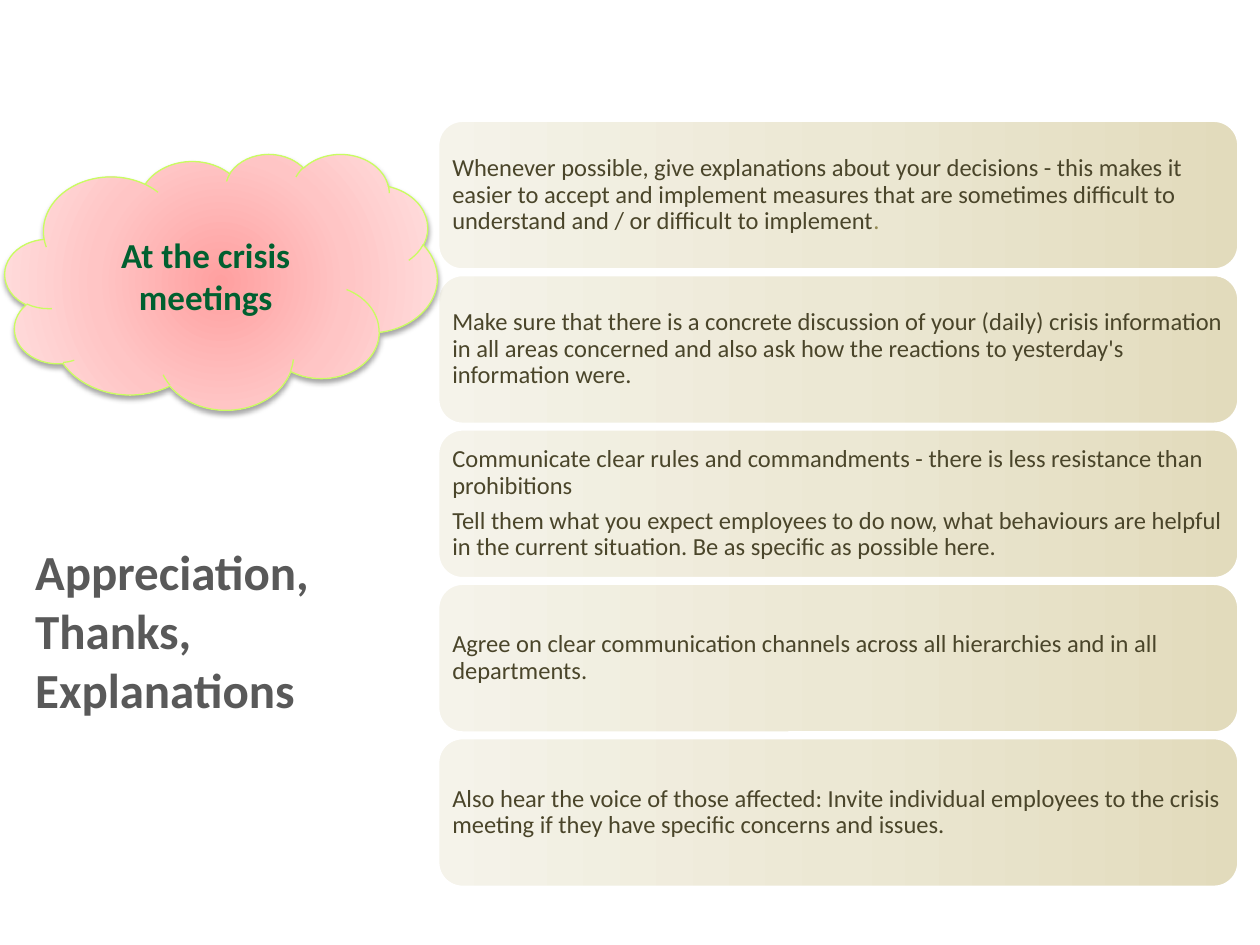
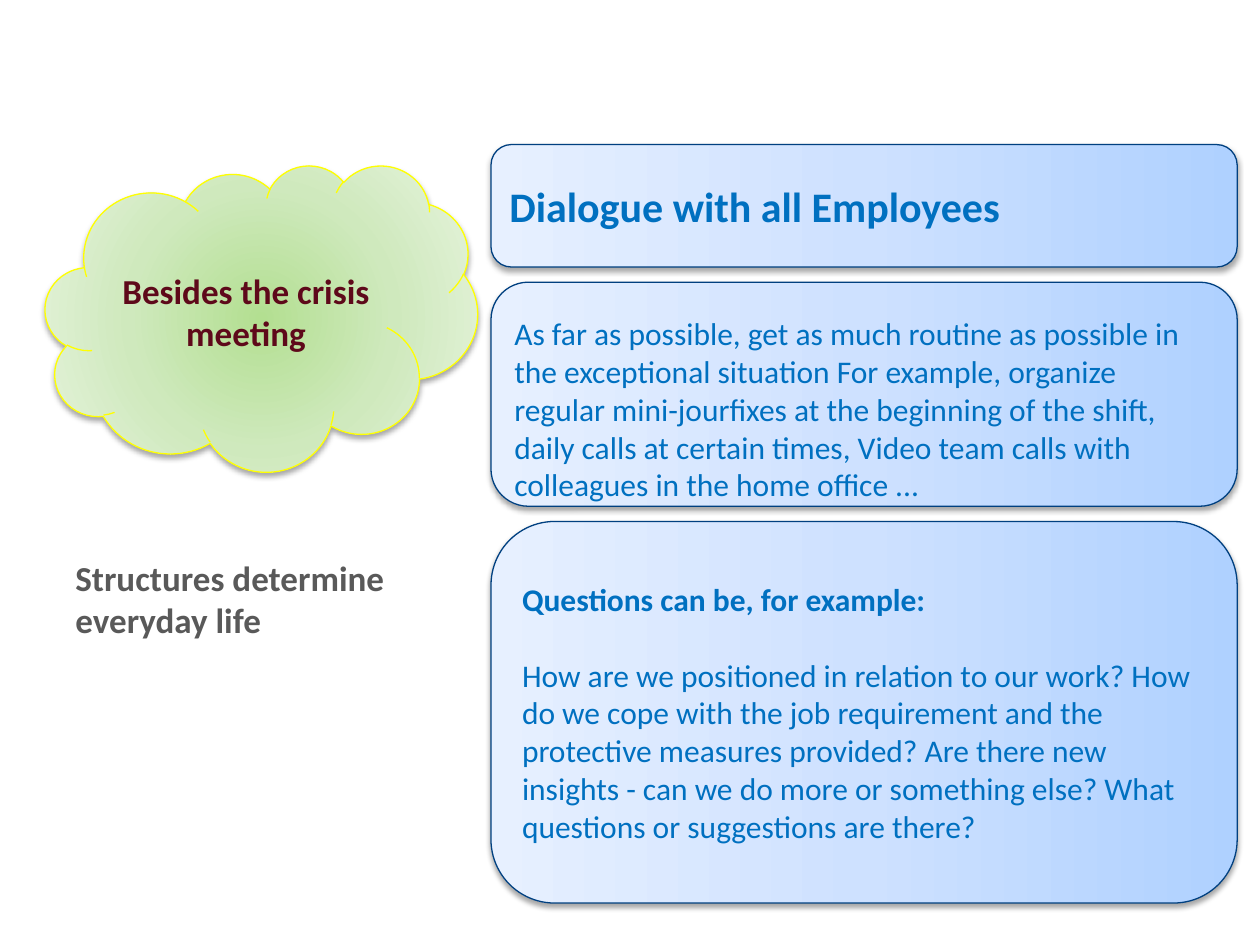
from lxml.etree import SubElement
from pptx import Presentation
from pptx.dml.color import RGBColor
from pptx.enum.shapes import MSO_SHAPE as Shape
from pptx.enum.text import MSO_ANCHOR as Anchor, PP_ALIGN as Align
from pptx.oxml import parse_xml
from pptx.oxml.ns import nsdecls, qn
from pptx.util import Pt

FONT = "Calibri"
GREY = RGBColor(0x59, 0x59, 0x59)
OLIVE = RGBColor(0x4A, 0x45, 0x2A)
LIGHT_OLIVE = RGBColor(0x94, 0x8A, 0x54)
GREEN = RGBColor(0x00, 0x60, 0x30)
MAROON = RGBColor(0x5E, 0x09, 0x1A)
BLUE = RGBColor(0x00, 0x70, 0xC0)
NAVY = RGBColor(0x00, 0x40, 0x80)
WHITE = RGBColor(0xFF, 0xFF, 0xFF)
LIME = RGBColor(0xC9, 0xFD, 0x60)
YELLOW = RGBColor(0xFF, 0xFF, 0x00)

SAND_FADE = [RGBColor.from_string(c) for c in ("E2DBBC", "ECE8D4", "F5F3EA")]
BLUE_FADE = [RGBColor.from_string(c) for c in ("AFD1FF", "CEE1FF", "E7F0FF")]
PINK_FADE = [RGBColor.from_string(c) for c in ("FFA0A0", "FFC5C5", "FFE3E3")]
GREEN_FADE = [RGBColor.from_string(c) for c in ("B3DF91", "CFE9BD", "E7F4DF")]

LINEAR = '<a:lin ang="10800000" scaled="0"/>'
RADIAL = '<a:path path="circle"><a:fillToRect l="50000" t="50000" r="50000" b="50000"/></a:path>'

# Each slide: cloud, heading beside it; places are left, top, width, height
SLIDES = [
    {
        "cloud": ("At the crisis meetings", (2.9, 87.8, 247, 146.2), PINK_FADE, LIME, GREEN),
        "heading": ("Appreciation, Thanks, Explanations", (13, 306, 236.9, 149.8), 28),
    },
    {
        "cloud": ("Besides the crisis meeting", (25.9, 94.3, 247, 175), GREEN_FADE, YELLOW, MAROON),
        "heading": ("Structures determine everyday life", (36, 314.5, 236.9, 168), 20),
    },
]

# Each piece of advice: paragraphs of (text, colour) runs
MEETING_ADVICE = [
    [[("Whenever possible, give explanations about your decisions - this makes it easier to accept "
       "and implement measures that are sometimes difficult to understand and / or difficult to "
       "implement", OLIVE), (".", LIGHT_OLIVE)]],
    [[("Make sure that there is a concrete discussion of your (daily) crisis information in all "
       "areas concerned and also ask how the reactions to yesterday's information were.", OLIVE)]],
    [[("Communicate clear rules and commandments - there is less resistance than prohibitions", OLIVE)],
     [("Tell them what you expect employees to do now, what behaviours are helpful in the current "
       "situation. Be as specific as possible here.", OLIVE)]],
    [[("Agree on clear communication channels across all hierarchies and in all departments.", OLIVE)]],
    [[("Also hear the voice of those affected: Invite individual employees to the crisis meeting if "
       "they have specific concerns and issues.", OLIVE)]],
]
ADVICE_LEFT, ADVICE_TOP, ADVICE_WIDTH, ADVICE_HEIGHT = 250.1, 68.7, 457.9, 85.6
ADVICE_PITCH = 88.2

# Each dialogue box: height, paragraphs of (text, size, bold)
DIALOGUE = [
    (70, [("Dialogue with all Employees", 24, True)]),
    (128, [("As far as possible, get as much routine as possible in the exceptional situation For "
            "example, organize regular mini-jourfixes at the beginning of the shift, daily calls at "
            "certain times, Video team calls with colleagues in the home office ...", 18, False)]),
    (218, [("Questions can be, for example:", 18, True),
           ("How are we positioned in relation to our work? How do we cope with the job requirement "
            "and the protective measures provided? Are there new insights - can we do more or "
            "something else? What questions or suggestions are there?", 18, False)]),
]
DIALOGUE_LEFT, DIALOGUE_TOP, DIALOGUE_WIDTH, DIALOGUE_GAP = 280.6, 82.6, 426.4, 8.7
ROUTINE_BOX = 1
QUESTION_GAP = 21.6


def add_run(paragraph, text, size, color, bold=False):
    run = paragraph.add_run()
    run.text = text
    run.font.name = FONT
    run.font.size = Pt(size)
    run.font.bold = bold
    run.font.color.rgb = color


def add_paragraph(frame, index):
    """Return the frame's own first paragraph, or a new one after it."""
    paragraph = frame.add_paragraph() if index else frame.paragraphs[0]
    paragraph.alignment = Align.LEFT
    return paragraph


def add_faded_shape(slide, kind, place, fade, direction, line, line_width):
    shape = slide.shapes.add_shape(kind, *map(Pt, place))
    shape.shadow.inherit = False
    shape.line.color.rgb = line
    shape.line.width = Pt(line_width)
    stops = "".join(f'<a:gs pos="{i * 50000}"><a:srgbClr val="{color}"/></a:gs>'
                    for i, color in enumerate(fade))
    gradient = parse_xml(f'<a:gradFill {nsdecls("a")} rotWithShape="1">'
                         f'<a:gsLst>{stops}</a:gsLst>{direction}</a:gradFill>')
    shape.element.spPr.find(qn("a:prstGeom")).addnext(gradient)
    shape.text_frame.word_wrap = True
    shape.text_frame.vertical_anchor = Anchor.MIDDLE
    return shape


def add_soft_shadow(shape):
    effects = shape.element.spPr.find(qn("a:effectLst"))
    shadow = SubElement(effects, qn("a:outerShdw"), blurRad=str(Pt(3.1)), dist=str(Pt(1.8)),
                        dir="5400000", rotWithShape="0")
    color = SubElement(shadow, qn("a:srgbClr"), val="000000")
    SubElement(color, qn("a:alpha"), val="35000")


def add_cloud(slide, text, place, fade, line, color):
    cloud = add_faded_shape(slide, Shape.CLOUD, place, fade, RADIAL, line, 0.75)
    add_soft_shadow(cloud)
    paragraph = cloud.text_frame.paragraphs[0]
    paragraph.alignment = Align.CENTER
    add_run(paragraph, text, 20, color, bold=True)


def add_heading(slide, text, place, size):
    frame = slide.shapes.add_textbox(*map(Pt, place)).text_frame
    frame.word_wrap = True
    add_run(add_paragraph(frame, 0), text, size, GREY, bold=True)


def add_meeting_advice(slide):
    for row, paragraphs in enumerate(MEETING_ADVICE):
        place = (ADVICE_LEFT, ADVICE_TOP + row * ADVICE_PITCH, ADVICE_WIDTH, ADVICE_HEIGHT)
        box = add_faded_shape(slide, Shape.ROUNDED_RECTANGLE, place, SAND_FADE, LINEAR, WHITE, 2)
        frame = box.text_frame
        frame.margin_left = frame.margin_right = frame.margin_top = frame.margin_bottom = Pt(4.2)
        for index, runs in enumerate(paragraphs):
            paragraph = add_paragraph(frame, index)
            paragraph.line_spacing = 0.9
            paragraph.space_after = Pt(4.9)
            for text, color in runs:
                add_run(paragraph, text, 14, color)


def add_dialogue(slide):
    top = DIALOGUE_TOP
    for row, (height, paragraphs) in enumerate(DIALOGUE):
        place = (DIALOGUE_LEFT, top, DIALOGUE_WIDTH, height)
        box = add_faded_shape(slide, Shape.ROUNDED_RECTANGLE, place, BLUE_FADE, LINEAR, NAVY, 0.75)
        add_soft_shadow(box)
        frame = box.text_frame
        if row == ROUTINE_BOX:
            frame.vertical_anchor = Anchor.TOP
            frame.margin_top = Pt(12)
        for index, (text, size, bold) in enumerate(paragraphs):
            paragraph = add_paragraph(frame, index)
            if index:
                paragraph.space_before = Pt(QUESTION_GAP)
            add_run(paragraph, text, size, BLUE, bold)
        top += height + DIALOGUE_GAP


def main():
    deck = Presentation()
    deck.slide_width, deck.slide_height = Pt(720), Pt(540)
    for content, add_boxes in zip(SLIDES, (add_meeting_advice, add_dialogue)):
        slide = deck.slides.add_slide(deck.slide_layouts[6])
        add_heading(slide, *content["heading"])
        add_boxes(slide)
        add_cloud(slide, *content["cloud"])
    deck.save("out.pptx")


if __name__ == "__main__":
    main()
